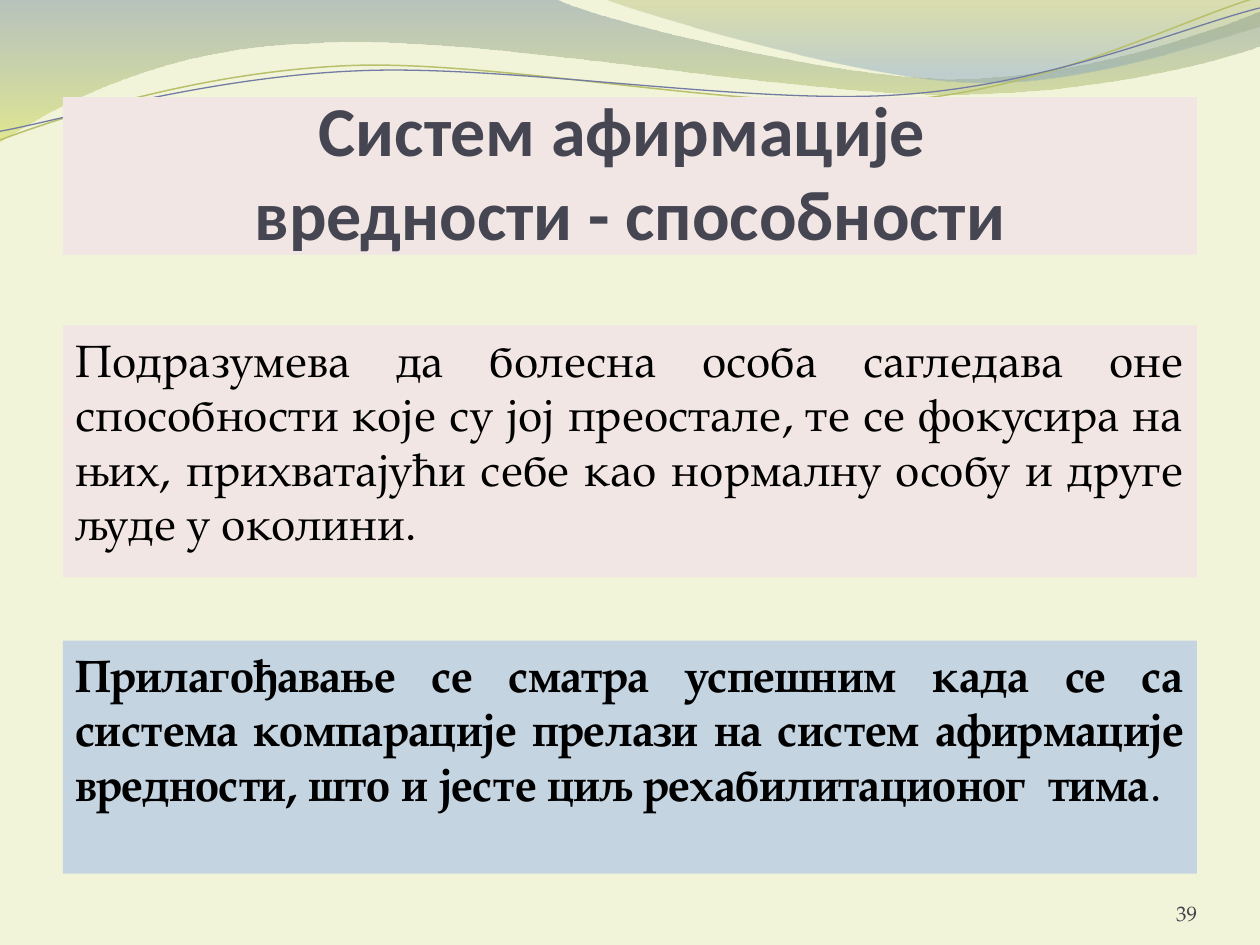
from pptx import Presentation
from pptx.dml.color import RGBColor
from pptx.enum.shapes import MSO_SHAPE
from pptx.enum.text import MSO_ANCHOR, PP_ALIGN
from pptx.oxml.ns import qn
from pptx.util import Pt
from lxml.etree import SubElement

CREAM = RGBColor(0xF2, 0xF4, 0xD9)
ROSE = RGBColor(0xF1, 0xE6, 0xE3)
SKY = RGBColor(0xC5, 0xD4, 0xE1)
SLATE = RGBColor(0x46, 0x46, 0x53)
GREY = RGBColor(0x43, 0x43, 0x4F)
BLACK = RGBColor(0, 0, 0)
STEEL = RGBColor(0x72, 0x88, 0x9B)
LIME = RGBColor(0xD3, 0xDE, 0x57)
OLIVE = RGBColor(0xA4, 0xAC, 0x50)
BLUE = RGBColor(0x84, 0xA3, 0xBD)
GREEN_LINE = RGBColor(0xB9, 0xC0, 0x6C)
BLUE_LINE = RGBColor(0x72, 0x7C, 0xA3)

SERIF = "TeX Gyre Pagella"
LANGUAGE = "sr-Cyrl-RS"
MARGIN = 36
CONTENT_WIDTH = 648

WIDE_WAVE = [
    (0, 0), (316.8, -0.7),
    (343, 12, 478, 45, 546, 45), (614, 45, 690, 19, 720, 6.5),
    (720.7, 26),
    (708, 32, 626, 55, 537, 54), (448, 54, 275, 20, 185, 24.5),
    (93, 26, 33, 60, -0.7, 81.4),
]
CORNER_WAVE = [
    (345, -0.7),
    (366.5, 8, 491, 44.6, 553.7, 46.8), (616, 49.7, 692, 23, 720, 15),
    (720, 0),
]
GREEN_CURVE = [
    (0, 80), (34.5, 67, 114, 41, 199.5, 37.5),
    (284.5, 34, 427, 64, 513.5, 57.5), (600, 51, 675.5, 11, 718.5, -1.5),
]
BLUE_CURVE = [
    (0, 75), (34, 69, 118, 44, 204, 40.5),
    (290, 36.5, 430, 60.5, 516, 54), (602, 48, 677.5, 15, 720, 4.5),
]


def bend(shape, segments):
    lines = iter(list(shape._element.iter(qn("a:lnTo"))))
    for segment in segments:
        line = next(lines)
        if len(segment) == 6:
            curve = line.makeelement(qn("a:cubicBezTo"))
            line.addprevious(curve)
            for part in (line, next(lines), next(lines)):
                curve.append(part[0])
                part.getparent().remove(part)


def add_outline(page, segments, close):
    points = [(Pt(x), Pt(y)) for segment in segments
              for x, y in zip(segment[::2], segment[1::2])]
    builder = page.shapes.build_freeform(*points[0])
    builder.add_line_segments(points[1:], close=close)
    shape = builder.convert_to_shape()
    bend(shape, segments[1:])
    shape.shadow.inherit = False
    return shape


def add_wave(page, segments, stops):
    wave = add_outline(page, segments, close=True)
    wave.line.fill.background()
    wave.fill.gradient()
    wave.fill.gradient_angle = 270
    for stop, (position, color, opacity) in zip(wave.fill.gradient_stops, stops):
        stop.position = position
        stop.color.rgb = color
    colors = wave._element.spPr.iter(qn("a:srgbClr"))
    for element, (position, color, opacity) in zip(colors, stops):
        SubElement(element, qn("a:alpha"), val=str(opacity * 1000))


def add_curve(page, segments, color, width):
    curve = add_outline(page, segments, close=False)
    curve.fill.background()
    curve.line.color.rgb = color
    curve.line.width = Pt(width)


def add_panel(page, top, height, color):
    panel = page.shapes.add_shape(MSO_SHAPE.RECTANGLE, Pt(MARGIN), Pt(top),
                                  Pt(CONTENT_WIDTH), Pt(height))
    panel.shadow.inherit = False
    panel.fill.solid()
    panel.fill.fore_color.rgb = color
    panel.line.fill.background()
    return panel


def format_span(span, font, size, color, bold):
    span.font.name = font
    span.font.size = Pt(size)
    span.font.color.rgb = color
    span.font.bold = bold
    span._r.get_or_add_rPr().set("lang", LANGUAGE)


def write(box, text, font=SERIF, size=26, color=BLACK, bold=False,
          align=PP_ALIGN.JUSTIFY, anchor=MSO_ANCHOR.TOP, insets=None):
    frame = box.text_frame
    frame.word_wrap = True
    frame.vertical_anchor = anchor
    if insets:
        (frame.margin_left, frame.margin_top,
         frame.margin_right, frame.margin_bottom) = map(Pt, insets)
    para = frame.paragraphs[0]
    para.alignment = align
    para.text = text
    for span in para.runs:
        format_span(span, font, size, color, bold)
    return para


def main():
    deck = Presentation()
    deck.slide_width, deck.slide_height = Pt(720), Pt(540)
    page = deck.slides.add_slide(deck.slide_layouts[6])
    page.background.fill.solid()
    page.background.fill.fore_color.rgb = CREAM

    add_wave(page, WIDE_WAVE, [(0, STEEL, 45), (1, LIME, 55)])
    add_wave(page, CORNER_WAVE, [(0, OLIVE, 30), (0.8, BLUE, 45)])
    add_curve(page, GREEN_CURVE, GREEN_LINE, 0.85)
    add_curve(page, BLUE_CURVE, BLUE_LINE, 0.75)

    write(add_panel(page, 55.5, 90, ROSE),
          "Систем афирмације \nвредности - способности",
          font="Calibri", size=40, color=SLATE, bold=True,
          align=PP_ALIGN.CENTER, anchor=MSO_ANCHOR.BOTTOM, insets=(0, 3.6, 0, 0))
    write(add_panel(page, 186, 144, ROSE),
          "Подразумева да болесна особа сагледава оне способности које су јој "
          "преостале, те се фокусира на њих, прихватајући себе као нормалну "
          "особу и друге људе у околини.")
    para = write(add_panel(page, 366, 133.2, SKY),
                 "Прилагођавање се сматра успешним када се са система компарације "
                 "прелази на систем афирмације вредности, што и јесте циљ "
                 "рехабилитационог  тима", bold=True)
    period = para.add_run()
    period.text = "."
    format_span(period, SERIF, 26, BLACK, False)

    number = page.shapes.add_textbox(Pt(624), Pt(500.4), Pt(60), Pt(28.8))
    write(number, "39", size=12, color=GREY, align=PP_ALIGN.RIGHT,
          anchor=MSO_ANCHOR.BOTTOM, insets=(0, 0, 0, 0))

    deck.save("out.pptx")


if __name__ == "__main__":
    main()
